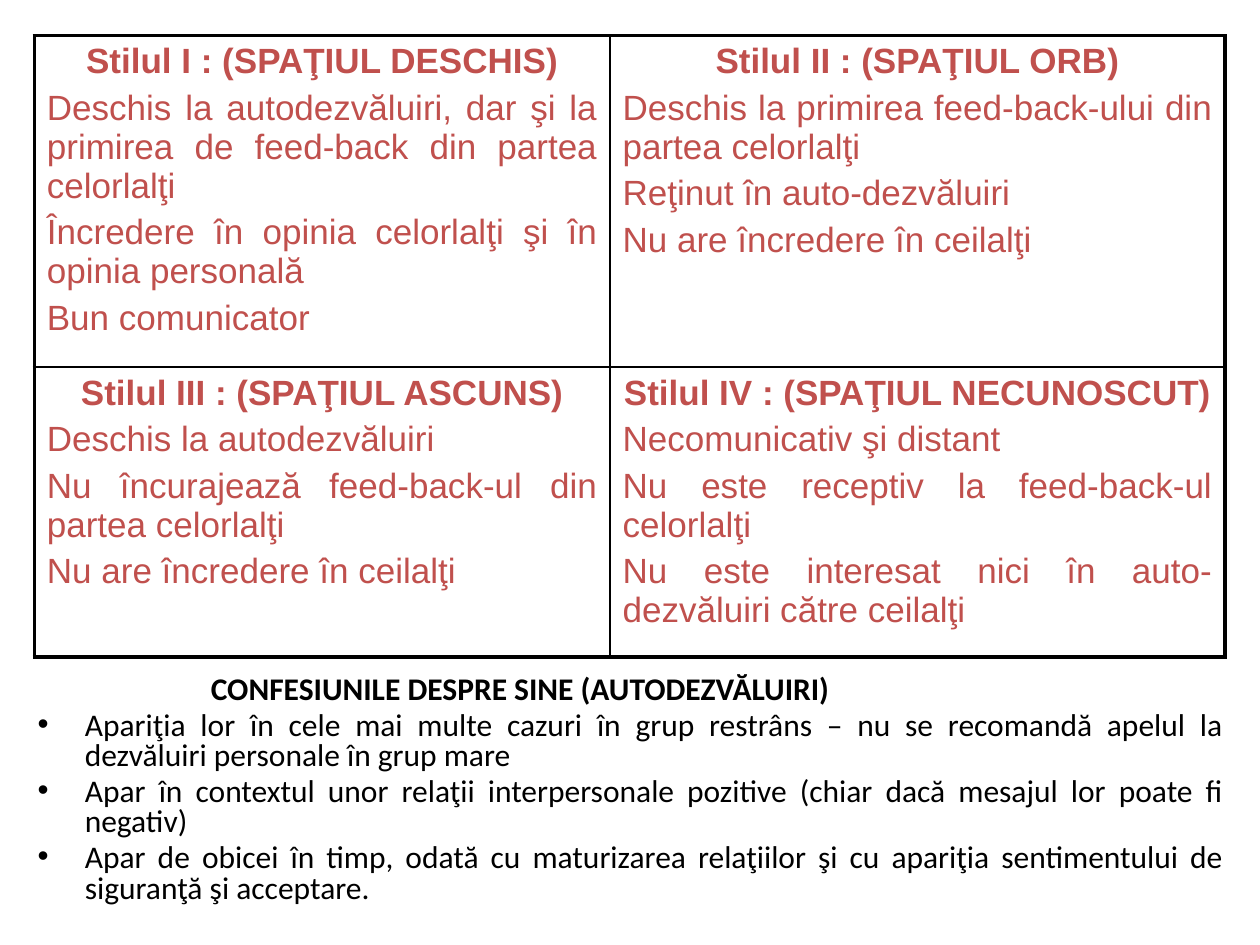
from lxml.etree import SubElement as Sub
from pptx import Presentation
from pptx.dml.color import RGBColor as Rgb
from pptx.enum.text import PP_ALIGN as Al
from pptx.oxml.ns import qn
from pptx.util import Pt

HUES = {"red": "C0504D", "black": "000000"}
COLS = (329, 351.4)
ROWS = (189.4, 165.6)
THICK, THIN = 2.25, 1

STYLES = [
    [
        ("Stilul I : (SPAŢIUL DESCHIS)", [
            "Deschis la autodezvăluiri, dar şi la primirea de feed-back din partea celorlalţi",
            "Încredere în opinia celorlalţi şi în opinia personală",
            "Bun comunicator"]),
        ("Stilul II : (SPAŢIUL ORB)", [
            "Deschis la primirea feed-back-ului din partea celorlalţi",
            "Reţinut în auto-dezvăluiri",
            "Nu are încredere în ceilalţi"]),
    ],
    [
        ("Stilul III : (SPAŢIUL ASCUNS)", [
            "Deschis la autodezvăluiri",
            "Nu încurajează feed-back-ul din partea celorlalţi",
            "Nu are încredere în ceilalţi"]),
        ("Stilul IV : (SPAŢIUL NECUNOSCUT)", [
            "Necomunicativ şi distant",
            "Nu este receptiv la feed-back-ul celorlalţi",
            "Nu este interesat nici în auto-dezvăluiri către ceilalţi"]),
    ],
]
TITLE = "CONFESIUNILE DESPRE SINE (AUTODEZVĂLUIRI)"
POINTS = [
    "Apariţia lor în cele mai multe cazuri în grup restrâns – nu se recomandă apelul la dezvăluiri personale în grup mare",
    "Apar în contextul unor relaţii interpersonale pozitive (chiar dacă mesajul lor poate fi negativ)",
    "Apar de obicei în timp, odată cu maturizarea relaţiilor şi cu apariţia sentimentului de siguranţă şi acceptare.",
]


def write(frame, nth, text, size, face, hue, bold, align, gap):
    para = frame.add_paragraph() if nth else frame.paragraphs[0]
    para.alignment = align
    para.space_before = Pt(gap)
    run = para.add_run()
    run.text = text
    font = run.font
    font.size, font.name, font.bold = Pt(size), face, bold
    font.color.rgb = Rgb.from_string(HUES[hue])
    return para


def edge(cell, side, width):
    line = Sub(cell._tc.get_or_add_tcPr(), qn("a:ln" + side), w=str(Pt(width)))
    fill = Sub(line, qn("a:solidFill"))
    Sub(fill, qn("a:srgbClr"), val=HUES["black"])


def draw_grid(slide):
    grid = slide.shapes.add_table(
        len(ROWS), len(COLS), Pt(19.6), Pt(20.4), Pt(sum(COLS)), Pt(sum(ROWS))).table
    grid.first_row = grid.horz_banding = False
    for col, width in zip(grid.columns, COLS):
        col.width = Pt(width)
    for row, height in zip(grid.rows, ROWS):
        row.height = Pt(height)
    for r, line in enumerate(STYLES):
        for c, (head, items) in enumerate(line):
            cell = grid.cell(r, c)
            outer = {"L": c == 0, "R": c == len(COLS) - 1,
                     "T": r == 0, "B": r == len(ROWS) - 1}
            for side, rim in outer.items():
                edge(cell, side, THICK if rim else THIN)
            cell.fill.background()
            for n, text in enumerate([head] + items):
                write(cell.text_frame, n, text, 20, "Arial", "red", n == 0,
                      Al.JUSTIFY if n else Al.CENTER, 4.3)


def draw_notes(slide):
    frame = slide.shapes.add_textbox(Pt(14.4), Pt(383), Pt(692), Pt(142)).text_frame
    frame.word_wrap = True
    for n, text in enumerate([TITLE] + POINTS):
        para = write(frame, n, text, 18, "Calibri", "black", n == 0, Al.JUSTIFY, 3.2)
        para.line_spacing = 0.8
        props = para._p.get_or_add_pPr()
        props.set("marL", str(Pt(27 if n else 99)))
        props.set("indent", str(Pt(-27 if n else 0)))
        if n:
            Sub(props, qn("a:buFont"), typeface="Arial")
            Sub(props, qn("a:buChar"), char="•")


def main():
    deck = Presentation()
    deck.slide_width, deck.slide_height = Pt(720), Pt(540)
    slide = deck.slides.add_slide(deck.slide_layouts[6])
    draw_notes(slide)
    draw_grid(slide)
    deck.save("out.pptx")


if __name__ == "__main__":
    main()
